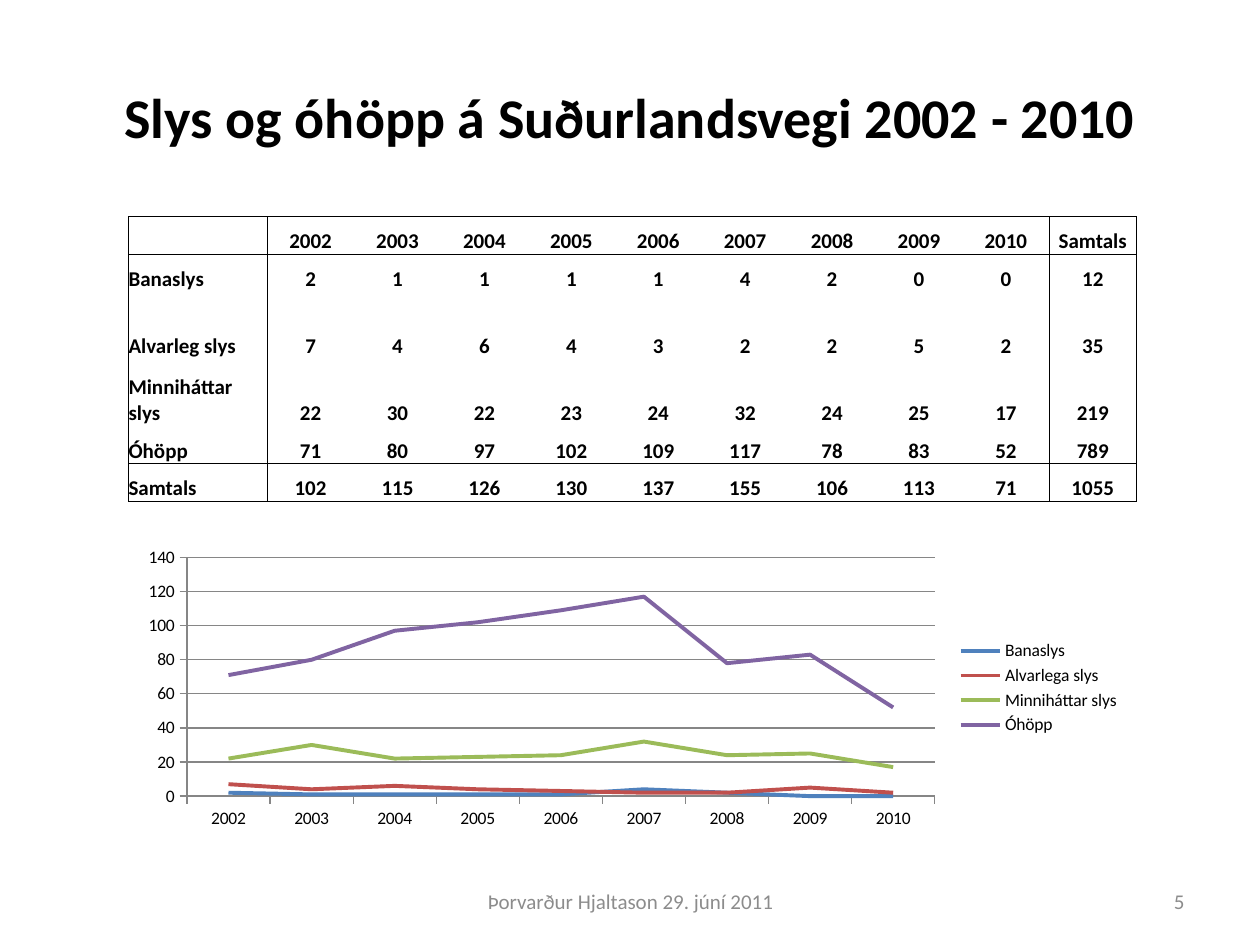
import lxml.etree
import pptx
import pptx.chart.data
import pptx.dml.color
import pptx.enum.chart
import pptx.enum.text
import pptx.oxml.ns
import pptx.util

Inches = pptx.util.Inches
Pt = pptx.util.Pt
RGBColor = pptx.dml.color.RGBColor
ALIGN = pptx.enum.text.PP_ALIGN
ANCHOR = pptx.enum.text.MSO_ANCHOR
CHART = pptx.enum.chart
qn = pptx.oxml.ns.qn

BLACK = RGBColor(0x00, 0x00, 0x00)
GREY = RGBColor(0x8C, 0x8C, 0x8C)
AXIS = RGBColor(0x86, 0x86, 0x86)
BLUE = RGBColor(0x4F, 0x81, 0xBD)
RED = RGBColor(0xC0, 0x50, 0x4D)
GREEN = RGBColor(0x9B, 0xBB, 0x59)
PURPLE = RGBColor(0x80, 0x64, 0xA2)
FONT = "Calibri"

YEARS = [str(year) for year in range(2002, 2011)]
# Table label, chart label, line colour, yearly counts
KINDS = [
    ("Banaslys", "Banaslys", BLUE, [2, 1, 1, 1, 1, 4, 2, 0, 0]),
    ("Alvarleg slys", "Alvarlega slys", RED, [7, 4, 6, 4, 3, 2, 2, 5, 2]),
    ("Minniháttar slys", "Minniháttar slys", GREEN,
     [22, 30, 22, 23, 24, 32, 24, 25, 17]),
    ("Óhöpp", "Óhöpp", PURPLE, [71, 80, 97, 102, 109, 117, 78, 83, 52]),
]


def add_text(slide, text, box, size, color, align, bold=False):
    frame = slide.shapes.add_textbox(*map(Inches, box)).text_frame
    frame.word_wrap = True
    frame.vertical_anchor = ANCHOR.MIDDLE
    para = frame.paragraphs[0]
    para.text = text
    para.alignment = align
    para.font.name = FONT
    para.font.size = Pt(size)
    para.font.bold = bold
    para.font.color.rgb = color


def add_edge(cell, side, shown):
    """Give one side (L, R, T or B) of a cell a thin black line, or none."""
    props = cell._tc.get_or_add_tcPr()
    line = lxml.etree.SubElement(props, qn(f"a:ln{side}"), w=str(Pt(0.5)))
    if shown:
        fill = lxml.etree.SubElement(line, qn("a:solidFill"))
        lxml.etree.SubElement(fill, qn("a:srgbClr"), val=str(BLACK))
    else:
        lxml.etree.SubElement(line, qn("a:noFill"))


prs = pptx.Presentation()
prs.slide_width = Inches(10)
prs.slide_height = Inches(7.5)
slide = prs.slides.add_slide(prs.slide_layouts[6])

add_text(slide, "Slys og óhöpp á Suðurlandsvegi 2002 - 2010",
         (0.5, 0.3, 9, 1.25), 32, BLACK, ALIGN.CENTER, bold=True)

# Line chart
data = pptx.chart.data.CategoryChartData()
data.categories = YEARS
for _, name, _, counts in KINDS:
    data.add_series(name, counts)
chart = slide.shapes.add_chart(
    CHART.XL_CHART_TYPE.LINE, Inches(1.02), Inches(4.3),
    Inches(7.97), Inches(2.32), data).chart
chart.has_title = False
chart.font.name = FONT
chart.font.size = Pt(10)
chart.font.color.rgb = BLACK
chart.has_legend = True
chart.legend.position = CHART.XL_LEGEND_POSITION.RIGHT
chart.legend.include_in_layout = False
chart.plots[0].vary_by_categories = False
for series, (_, _, color, _) in zip(chart.plots[0].series, KINDS):
    series.smooth = False
    series.format.line.width = Pt(2.25)
    series.format.line.color.rgb = color
for axis in (chart.category_axis, chart.value_axis):
    axis.major_tick_mark = CHART.XL_TICK_MARK.OUTSIDE
    axis.minor_tick_mark = CHART.XL_TICK_MARK.NONE
    axis.format.line.color.rgb = AXIS
    axis.format.line.width = Pt(0.75)
scale = chart.value_axis
scale.minimum_scale, scale.maximum_scale, scale.major_unit = 0, 140, 20
scale.has_major_gridlines = True
scale.major_gridlines.format.line.color.rgb = AXIS
scale.major_gridlines.format.line.width = Pt(0.75)

# Table with totals by kind and by year
rows = [["", *YEARS, "Samtals"]]
for label, _, _, counts in KINDS:
    rows.append([label, *counts, sum(counts)])
sums = [sum(column) for column in zip(*(kind[3] for kind in KINDS))]
rows.append(["Samtals", *sums, sum(sums)])

n_rows, n_cols = len(rows), len(rows[0])
table = slide.shapes.add_table(
    n_rows, n_cols, Inches(1.02), Inches(1.72),
    Inches(7.97), Inches(2.27)).table
table.first_row = False
table.horz_banding = False
for c, column in enumerate(table.columns):
    column.width = Inches(1.1 if c == 0 else 0.69)
for row, height in zip(table.rows, (0.3, 0.3, 0.53, 0.53, 0.3, 0.3)):
    row.height = Inches(height)

# Lines frame the table and set off the headings and the totals
ruled_rows = {0, 1, n_rows - 1, n_rows}
ruled_cols = {0, 1, n_cols - 1, n_cols}
for r, values in enumerate(rows):
    for c, value in enumerate(values):
        cell = table.cell(r, c)
        cell.margin_left = cell.margin_right = 0
        cell.margin_top = cell.margin_bottom = 0
        cell.vertical_anchor = ANCHOR.BOTTOM
        add_edge(cell, "L", c in ruled_cols)
        add_edge(cell, "R", c + 1 in ruled_cols)
        add_edge(cell, "T", r in ruled_rows)
        add_edge(cell, "B", r + 1 in ruled_rows)
        cell.fill.background()
        para = cell.text_frame.paragraphs[0]
        para.text = str(value)
        para.alignment = ALIGN.LEFT if c == 0 else ALIGN.CENTER
        para.font.name = FONT
        para.font.size = Pt(12)
        para.font.bold = True
        para.font.color.rgb = BLACK

add_text(slide, "5", (7.17, 6.95, 2.33, 0.4), 12, GREY, ALIGN.RIGHT)
add_text(slide, "Þorvarður Hjaltason 29. júní 2011",
         (3.42, 6.95, 3.17, 0.4), 12, GREY, ALIGN.CENTER)

prs.save("out.pptx")
